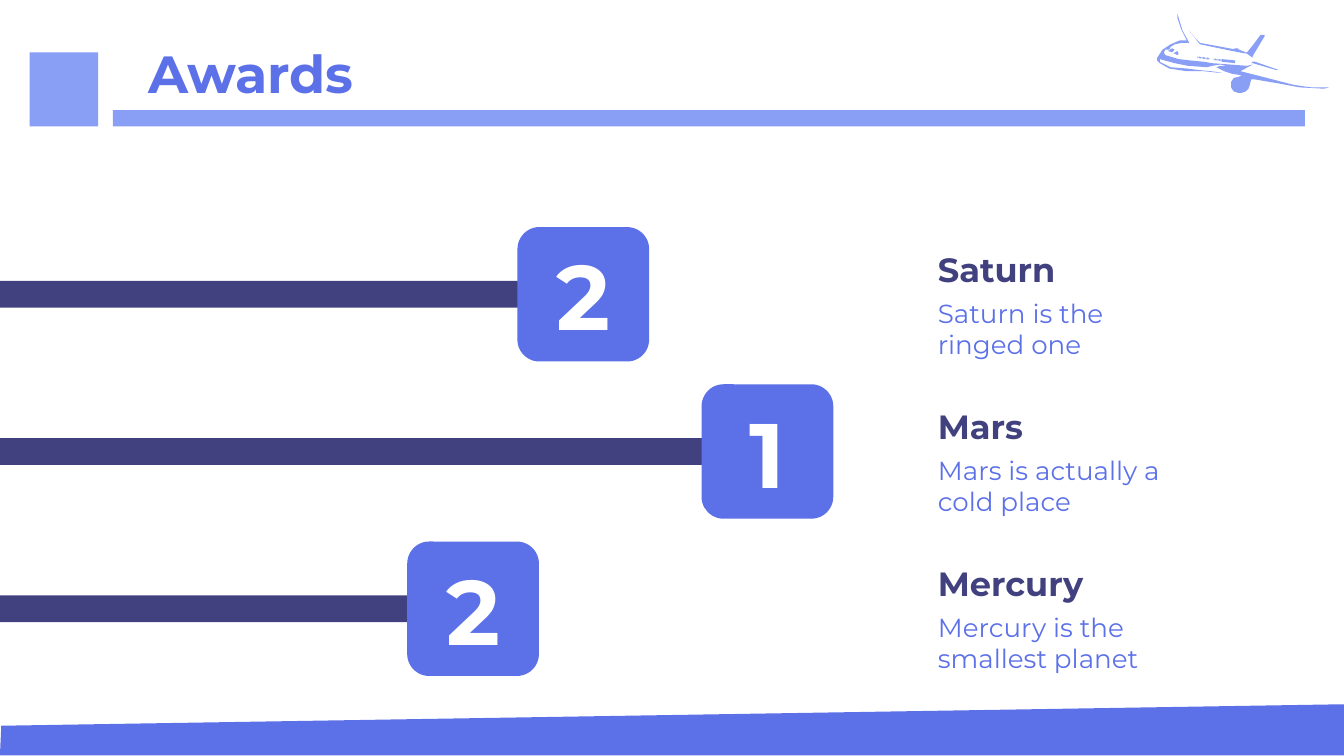
from dataclasses import dataclass

from pptx import Presentation
from pptx.dml.color import RGBColor
from pptx.enum.shapes import MSO_SHAPE
from pptx.enum.text import MSO_ANCHOR, PP_ALIGN
from pptx.util import Inches, Pt

# The slide is a grid of square cells; outlines use tenths of a cell.
COLUMNS, ROWS = 100, 56.25
CELL = Inches(10) / COLUMNS
ROW_TOP, ROW_PITCH = 16.9, 11.7
BADGE_COLUMNS, BADGE_ROWS = 9.8, 10
BAR_LEFT, BAR_ROWS, BAR_OVERLAP = -0.7, 2, 5.5
TEXT_LEFT = 68.8


@dataclass(frozen=True)
class Theme:
    font: str = "Montserrat"
    light: str = "899FF6"
    main: str = "5C71E8"
    dark: str = "424180"
    white: str = "FFFFFF"
    title_size: int = 28
    heading_size: int = 18
    body_size: int = 14
    badge_size: int = 49


THEME = Theme()

AWARDS = [
    ("Saturn", "Saturn is the ringed one", "2", 38.5),
    ("Mars", "Mars is actually a cold place", "1", 52.2),
    ("Mercury", "Mercury is the smallest planet", "2", 30.3),
]

PLANE_BODY = [
    (988, 65), (976, 65), (968, 64), (962, 63), (935, 56), (923, 53), (932, 48),
    (928, 49), (915, 48), (902, 47), (896, 46), (886, 45), (877, 44), (867, 41),
    (866, 39), (867, 37), (870, 37), (871, 35), (874, 33), (879, 31.5), (885, 32),
    (880, 23), (876, 10), (876, 13), (879, 22), (883, 30), (878, 30), (871, 33),
    (865, 37), (861, 43), (861, 45), (863, 47), (870, 51), (883, 53), (896, 53),
    (905, 54), (909, 54), (901, 53), (891, 52), (883, 51), (871, 50), (863, 46),
    (863, 44), (874, 47), (884, 49), (898, 50), (902, 49), (908, 48), (913, 49),
    (908, 49), (905, 50), (911, 53), (917, 55), (924, 56), (922, 57), (918, 58),
    (916, 61), (915.5, 65), (918, 68), (921, 69), (924, 69), (927, 68), (929, 66),
    (930, 63), (931, 59), (933, 59), (951, 62), (967, 65), (985, 66), (989, 65),
]
PLANE_TAIL = [
    (892, 32), (893, 33), (912, 37), (922, 39), (928, 40), (932, 43), (932, 42),
    (941, 27), (941, 26), (938, 26), (932, 34), (928, 39), (927, 39), (922, 37),
    (921, 36), (918, 36), (920, 37), (904, 34), (893, 32), (889, 28), (885, 23),
]
PLANE_STABILIZER = [(932, 46), (931, 47), (932, 47), (949, 52), (951, 52), (934, 46)]
PLANE_WINDSHIELD = [(874, 37), (872, 36.5), (869, 38), (872, 39)]
PLANE_SIDE_WINDOW = [(874, 40), (876, 41), (877, 40), (876, 38), (873, 40)]
PLANE_LETTERING = [(909, 44), (919, 45), (919, 47), (909, 45.5)]
PLANE_PARTS = [PLANE_BODY, PLANE_TAIL, PLANE_STABILIZER, PLANE_WINDSHIELD,
               PLANE_SIDE_WINDOW, PLANE_LETTERING]
PLANE_WINDOWS = [*range(891, 900), *range(903, 909)]


def color(value):
    return RGBColor.from_string(value)


def cells(*lengths):
    return [round(length * CELL) for length in lengths]


def apply(target, formats):
    for name, value in formats.items():
        setattr(target, name, value)


def paint(shape, fill):
    shape.shadow.inherit = False
    shape.fill.solid()
    shape.fill.fore_color.rgb = color(fill)
    shape.line.fill.background()


def add_block(page, kind, place, fill):
    block = page.shapes.add_shape(kind, *cells(*place))
    paint(block, fill)
    return block


def add_outline(page, points, fill):
    builder = page.shapes.build_freeform(*points[0], scale=CELL / 10)
    builder.add_line_segments(points[1:], close=True)
    paint(builder.convert_to_shape(), fill)


def write(shape, text, size, ink, bold=False, align=PP_ALIGN.LEFT,
          anchor=MSO_ANCHOR.TOP):
    inset = Inches(0.1)
    frame = shape.text_frame
    apply(frame, {"word_wrap": True, "vertical_anchor": anchor,
                  "margin_left": inset, "margin_right": inset,
                  "margin_top": inset, "margin_bottom": inset})
    para = frame.paragraphs[0]
    para.alignment = align
    span = para.add_run()
    span.text = text
    apply(span.font, {"name": THEME.font, "size": Pt(size), "bold": bold})
    span.font.color.rgb = color(ink)


def add_label(page, place, *text_format):
    write(page.shapes.add_textbox(*cells(*place)), *text_format)


def add_plane(page):
    for part in PLANE_PARTS:
        add_outline(page, part, THEME.light)
    for left in PLANE_WINDOWS:
        top = 42 + (left - 891) / 8
        place = (left / 10, top / 10, 0.08, 0.13)
        add_block(page, MSO_SHAPE.OVAL, place, THEME.light)


def add_header(page):
    add_block(page, MSO_SHAPE.RECTANGLE, (8.4, 8.2, 88.7, 1.2), THEME.light)
    add_block(page, MSO_SHAPE.RECTANGLE, (2.2, 3.9, 5.1, 5.5), THEME.light)
    add_label(page, (10.1, 2.1, 50.2, 6.3), "Awards", THEME.title_size,
              THEME.main, True)


def add_award(page, top, name, detail, number, badge_left):
    bar_top = top + (BADGE_ROWS - BAR_ROWS) / 2
    bar_columns = badge_left + BAR_OVERLAP - BAR_LEFT
    add_block(page, MSO_SHAPE.ROUNDED_RECTANGLE,
              (BAR_LEFT, bar_top, bar_columns, BAR_ROWS), THEME.dark)
    badge = add_block(page, MSO_SHAPE.ROUNDED_RECTANGLE,
                      (badge_left, top, BADGE_COLUMNS, BADGE_ROWS), THEME.main)
    write(badge, number, THEME.badge_size, THEME.white, True,
          PP_ALIGN.CENTER, MSO_ANCHOR.MIDDLE)
    add_label(page, (TEXT_LEFT, top + 0.6, 20.1, 3.9), name,
              THEME.heading_size, THEME.dark, True)
    add_label(page, (TEXT_LEFT, top + 4.2, 20.9, 6.6), detail,
              THEME.body_size, THEME.main)


def add_footer(page):
    bottom = ROWS * 10
    add_outline(page, [(1, 540), (1000, 524), (1000, bottom), (0, bottom)],
                THEME.main)


def main():
    deck = Presentation()
    deck.slide_width, deck.slide_height = cells(COLUMNS, ROWS)
    page = deck.slides.add_slide(deck.slide_layouts[6])
    add_plane(page)
    add_header(page)
    for index, award in enumerate(AWARDS):
        add_award(page, ROW_TOP + index * ROW_PITCH, *award)
    add_footer(page)
    deck.save("out.pptx")


if __name__ == "__main__":
    main()
